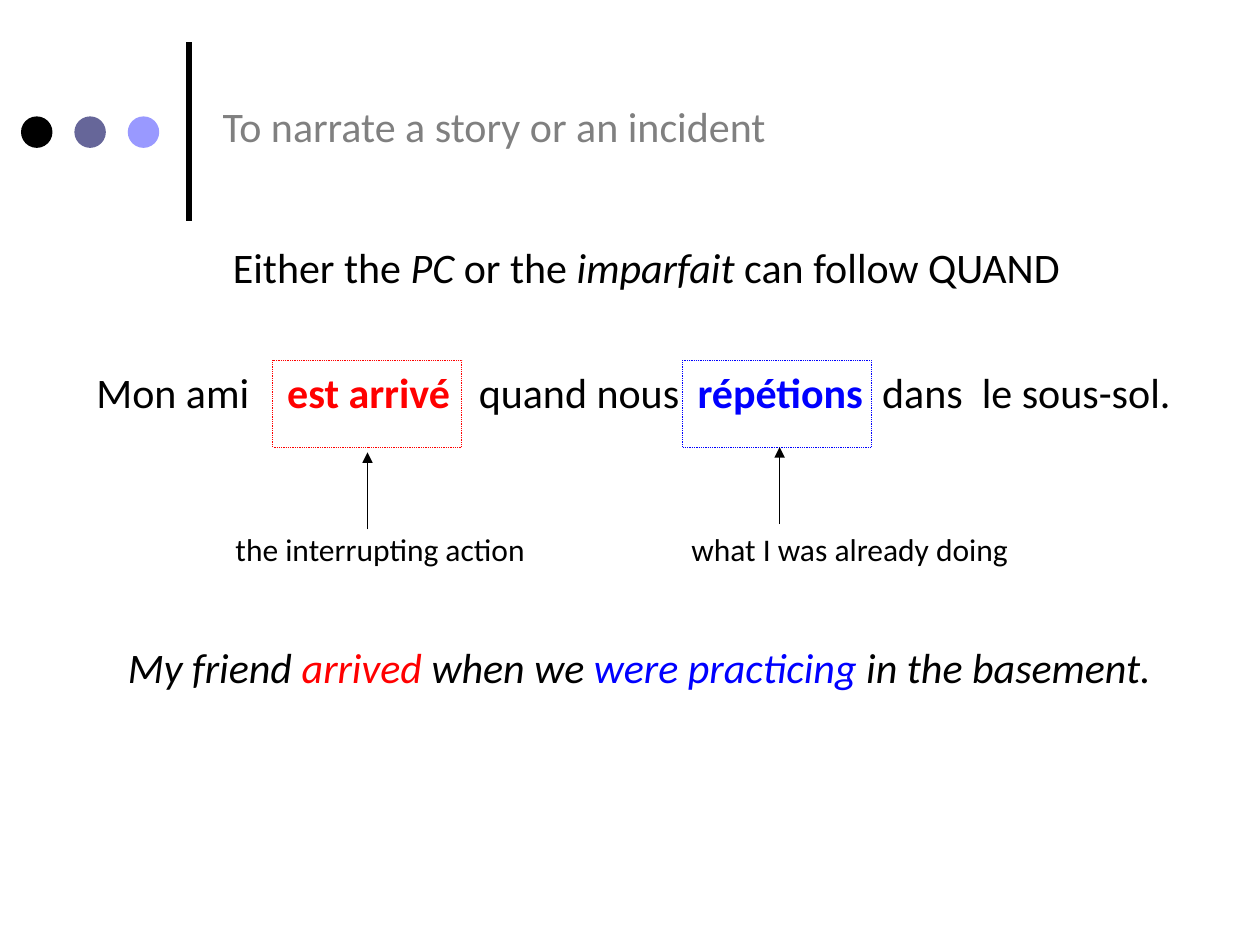
from pptx import Presentation
from pptx.dml.color import RGBColor
from pptx.enum.dml import MSO_LINE
from pptx.enum.shapes import MSO_CONNECTOR as Link, MSO_SHAPE as Form
from pptx.enum.text import MSO_ANCHOR as Anchor, PP_ALIGN as Align
from pptx.oxml.ns import qn
from pptx.util import Pt
from lxml.etree import SubElement as Sub

BLACK, RED, BLUE = "000000", "FF0000", "0000FF"


def tint(part, code):
    """Set a fill or font colour from a hex string."""
    part.rgb = RGBColor.from_string(code)


def style(item, **values):
    """Set each named attribute of an item."""
    for name, value in values.items():
        setattr(item, name, value)


def write(frame, runs, size=24, **form):
    """Write one paragraph of (text, colour, font values) runs in a frame."""
    style(frame, word_wrap=True, vertical_anchor=Anchor.TOP)
    para = frame.paragraphs[0]
    style(para, alignment=Align.LEFT, **form)
    for text, code, look in runs:
        run = para.add_run()
        run.text = text
        style(run.font, name="Calibri", size=Pt(size), **look)
        tint(run.font.color, code)
    return para


def label(slide, box, runs, size=24, **form):
    """Add a text box holding one paragraph."""
    frame = slide.shapes.add_textbox(*map(Pt, box)).text_frame
    return write(frame, runs, size, **form)


def shape(slide, form, box):
    """Add a preset shape without shadow."""
    item = slide.shapes.add_shape(form, *map(Pt, box))
    item.shadow.inherit = False
    return item


def line(slide, ends, width, arrow=False):
    """Add a black line, with an arrowhead at its end if asked."""
    link = slide.shapes.add_connector(Link.STRAIGHT, *map(Pt, ends))
    link.line.width = Pt(width)
    tint(link.line.color, BLACK)
    props = link._element.spPr
    if arrow:
        Sub(props.find(qn("a:ln")), qn("a:tailEnd"), type="triangle")
    Sub(props, qn("a:effectLst"))


def header(slide, x, y):
    """Place the rule, the three dots and the title."""
    line(slide, (x + 96, y + 102, x + 96, y), 3)
    for place, code in enumerate((BLACK, "666699", "9999FF")):
        dot = shape(slide, Form.OVAL, (x + 30.5 * place, y + 42.5, 18, 18))
        dot.fill.solid()
        tint(dot.fill.fore_color, code)
        dot.line.fill.background()
    title = slide.shapes.title
    style(title, left=Pt(x + 108), top=Pt(y + 30), width=Pt(576), height=Pt(36))
    write(title.text_frame, [("To narrate a story or an incident", "808080", {})])


def rule(slide, x, y):
    """Place the grammar rule."""
    slant = {"italic": True}
    label(slide, (x, y, 570, 50), [
        ("Either the ", BLACK, {}), ("PC", BLACK, slant),
        (" or the ", BLACK, {}), ("imparfait ", BLACK, slant),
        ("can follow QUAND", BLACK, {})], line_spacing=1.5)


def french(slide, x, y):
    """Place the French sentence, its parts set on tab stops."""
    bold = {"bold": True}
    para = label(slide, (x, y, 666, 36), [
        ("Mon ami\t", BLACK, {}), ("est arrivé\t", RED, bold),
        ("quand nous\t", BLACK, {}), ("répétions\t", BLUE, bold),
        ("dans  le sous-sol.", BLACK, {})])
    tabs = Sub(para._p.get_or_add_pPr(), qn("a:tabLst"))
    for stop in (109, 218.5, 343.5, 449):
        Sub(tabs, qn("a:tab"), pos=str(Pt(stop)), algn="l")


def verb(slide, x, y, code, tip, note, at, wide):
    """Place a dotted frame with an arrow and a note below it."""
    frame = shape(slide, Form.RECTANGLE, (x, y, 108, 49.5))
    frame.fill.background()
    style(frame.line, width=Pt(0.5), dash_style=MSO_LINE.ROUND_DOT)
    tint(frame.line.color, code)
    across, top = x + tip[0], y + tip[1]
    line(slide, (across, top + 44, across, top), 0.75, True)
    label(slide, (x + at, y + 93.5, wide, 29), [(note, BLACK, {})], 18)


def english(slide, x, y):
    """Place the English sentence."""
    parts = (("My friend ", BLACK), ("arrived ", RED), ("when we ", BLACK),
             ("were practicing ", BLUE), ("in the basement.", BLACK))
    label(slide, (x, y, 630, 36),
          [(text, code, {"italic": True}) for text, code in parts])


def main():
    """Build and save the slide."""
    deck = Presentation()
    style(deck, slide_width=Pt(720), slide_height=Pt(540))
    slide = deck.slides.add_slide(deck.slide_layouts[5])
    header(slide, 12, 24)
    rule(slide, 126, 120)
    french(slide, 48, 206)
    verb(slide, 156, 206, RED, (54, 52.5), "the interrupting action", -28.5, 186)
    verb(slide, 390, 206, BLUE, (55.5, 49.5), "what I was already doing", -2, 212)
    english(slide, 66, 363)
    deck.save("out.pptx")


if __name__ == "__main__":
    main()
